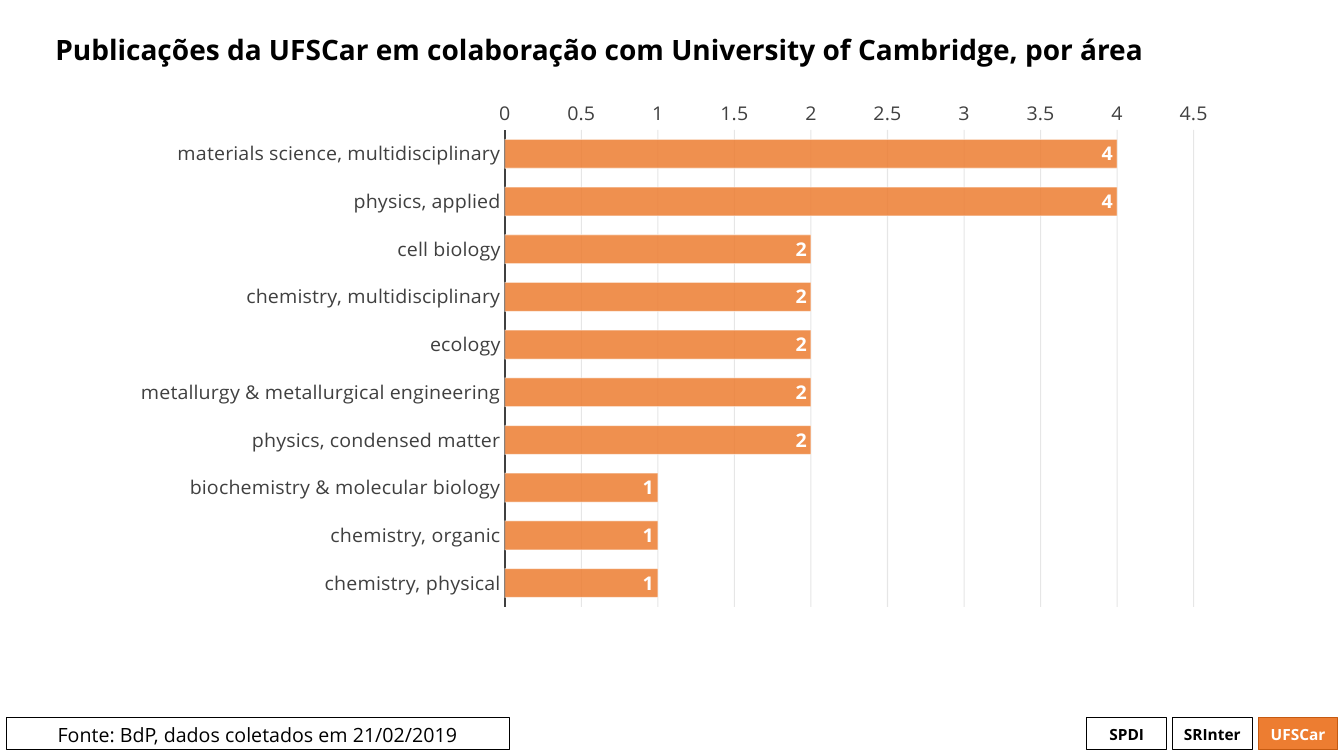
from lxml.etree import SubElement
from pptx import Presentation
from pptx.chart.data import CategoryChartData
from pptx.dml.color import RGBColor
from pptx.enum.chart import XL_AXIS_CROSSES as Cross
from pptx.enum.chart import XL_CHART_TYPE as Kind
from pptx.enum.chart import XL_LABEL_POSITION as Spot
from pptx.enum.chart import XL_TICK_MARK as Tick
from pptx.enum.shapes import MSO_SHAPE as Form
from pptx.enum.text import MSO_ANCHOR as Anchor
from pptx.enum.text import PP_ALIGN as Align
from pptx.oxml import parse_xml
from pptx.oxml.ns import nsdecls, qn
from pptx.util import Inches, Pt

BLACK = RGBColor(0x00, 0x00, 0x00)
WHITE = RGBColor(0xFF, 0xFF, 0xFF)
GREY = RGBColor(0x40, 0x40, 0x40)
INK = RGBColor(0x0D, 0x0D, 0x0D)
ORANGE = RGBColor(0xED, 0x7D, 0x31)
RUST = RGBColor(0xC5, 0x5A, 0x11)
FACE = "Open Sans"

TITLE = "Publicações da UFSCar em colaboração com University of Cambridge, por área"
SOURCE = "Fonte: BdP, dados coletados em 21/02/2019"
# name, fill, line, text colour
TAGS = [
    ("SPDI", None, BLACK, BLACK),
    ("SRInter", None, BLACK, BLACK),
    ("UFSCar", ORANGE, RUST, WHITE),
]
AREAS = {
    "materials science, multidisciplinary": 4,
    "physics, applied": 4,
    "cell biology": 2,
    "chemistry, multidisciplinary": 2,
    "ecology": 2,
    "metallurgy & metallurgical engineering": 2,
    "physics, condensed matter": 2,
    "biochemistry & molecular biology": 1,
    "chemistry, organic": 1,
    "chemistry, physical": 1,
}
PLOT = {"x": 0.35, "y": 0.02, "w": 0.62, "h": 0.89}
FOOT_TOP, FOOT_TALL = 7.12, 0.32
TAG_LEFT, TAG_WIDE, TAG_STEP = 10.78, 0.79, 0.85


def assign(item, values):
    for name, value in values.items():
        setattr(item, name, value)


def style(font, size, color, bold=False):
    assign(font, {"name": FACE, "size": Pt(size), "bold": bold})
    font.color.rgb = color


def stroke(line, color, width=0.75):
    line.color.rgb = color
    line.width = Pt(width)


def fade(fill, percent):
    """Set the opacity of a solid fill element."""
    tint = fill.find(qn("a:srgbClr"))
    SubElement(tint, qn("a:alpha")).set("val", str(percent * 1000))


def write(shape, text, size, color, bold, align, anchor):
    frame = shape.text_frame
    assign(frame, {"word_wrap": True, "vertical_anchor": anchor})
    para = frame.paragraphs[0]
    para.alignment = align
    run = para.add_run()
    run.text = text
    style(run.font, size, color, bold)
    return para


def add_box(slide, left, wide, fill, line):
    box = slide.shapes.add_shape(
        Form.RECTANGLE, Inches(left), Inches(FOOT_TOP), Inches(wide), Inches(FOOT_TALL))
    box.shadow.inherit = False
    if fill is None:
        box.fill.background()
    else:
        box.fill.solid()
        box.fill.fore_color.rgb = fill
    stroke(box.line, line)
    return box


def add_bars(slide):
    data = CategoryChartData()
    data.categories = list(AREAS)
    data.add_series("Series 1", list(AREAS.values()))
    chart = slide.shapes.add_chart(
        Kind.BAR_CLUSTERED, Inches(1.15), Inches(0.99),
        Inches(11.02), Inches(5.51), data).chart
    assign(chart, {"has_legend": False, "has_title": False})
    style(chart.font, 14, BLACK)

    cats, vals = chart.category_axis, chart.value_axis
    for axis in (cats, vals):
        assign(axis, {"major_tick_mark": Tick.NONE, "minor_tick_mark": Tick.NONE})
        style(axis.tick_labels.font, 14, GREY)
    assign(cats, {"reverse_order": True, "crosses": Cross.MAXIMUM,
                  "has_major_gridlines": False})
    stroke(cats.format.line, GREY, 1.5)
    assign(vals, {"minimum_scale": 0, "maximum_scale": 4.5, "major_unit": 0.5,
                  "has_major_gridlines": True})
    assign(vals.tick_labels, {"number_format": "General",
                              "number_format_is_linked": False})
    vals.format.line.fill.background()
    grid = vals.major_gridlines
    stroke(grid.format.line, INK)
    fade(next(grid._xAx.find(qn("c:majorGridlines")).iter(qn("a:solidFill"))), 10)

    plot = chart.plots[0]
    assign(plot, {"gap_width": 65, "vary_by_categories": False})
    bars = plot.series[0]
    bars.format.fill.solid()
    bars.format.fill.fore_color.rgb = ORANGE
    stroke(bars.format.line, WHITE)
    props = bars._element.find(qn("c:spPr"))
    fade(props.find(qn("a:solidFill")), 85)
    fade(props.find(qn("a:ln")).find(qn("a:solidFill")), 50)
    labels = bars.data_labels
    assign(labels, {"show_value": True, "position": Spot.INSIDE_END})
    style(labels.font, 14, WHITE, True)

    area = chart._chartSpace.chart.plotArea
    for old in area.findall(qn("c:layout")):
        area.remove(old)
    sizes = "".join(f'<c:{key} val="{part}"/>' for key, part in PLOT.items())
    area.insert(0, parse_xml(
        f'<c:layout {nsdecls("c")}><c:manualLayout><c:layoutTarget val="inner"/>'
        f'<c:xMode val="edge"/><c:yMode val="edge"/>{sizes}'
        '</c:manualLayout></c:layout>'))


def main():
    deck = Presentation()
    assign(deck, {"slide_width": Inches(13.33), "slide_height": Inches(7.5)})
    slide = deck.slides.add_slide(deck.slide_layouts[6])

    for i, (name, fill, line, color) in enumerate(TAGS):
        tag = add_box(slide, TAG_LEFT + i * TAG_STEP, TAG_WIDE, fill, line)
        write(tag, name, 11, color, True, Align.CENTER, Anchor.MIDDLE)
    note = add_box(slide, 0.06, 4.99, None, BLACK)
    write(note, SOURCE, 14, BLACK, False, Align.CENTER, Anchor.TOP)

    head = slide.shapes.add_textbox(
        Inches(0.45), Inches(0.06), Inches(12.41), Inches(0.91))
    para = write(head, TITLE, 20, BLACK, True, Align.LEFT, Anchor.MIDDLE)
    para.line_spacing = 0.9
    add_bars(slide)
    deck.save("out.pptx")


if __name__ == "__main__":
    main()
